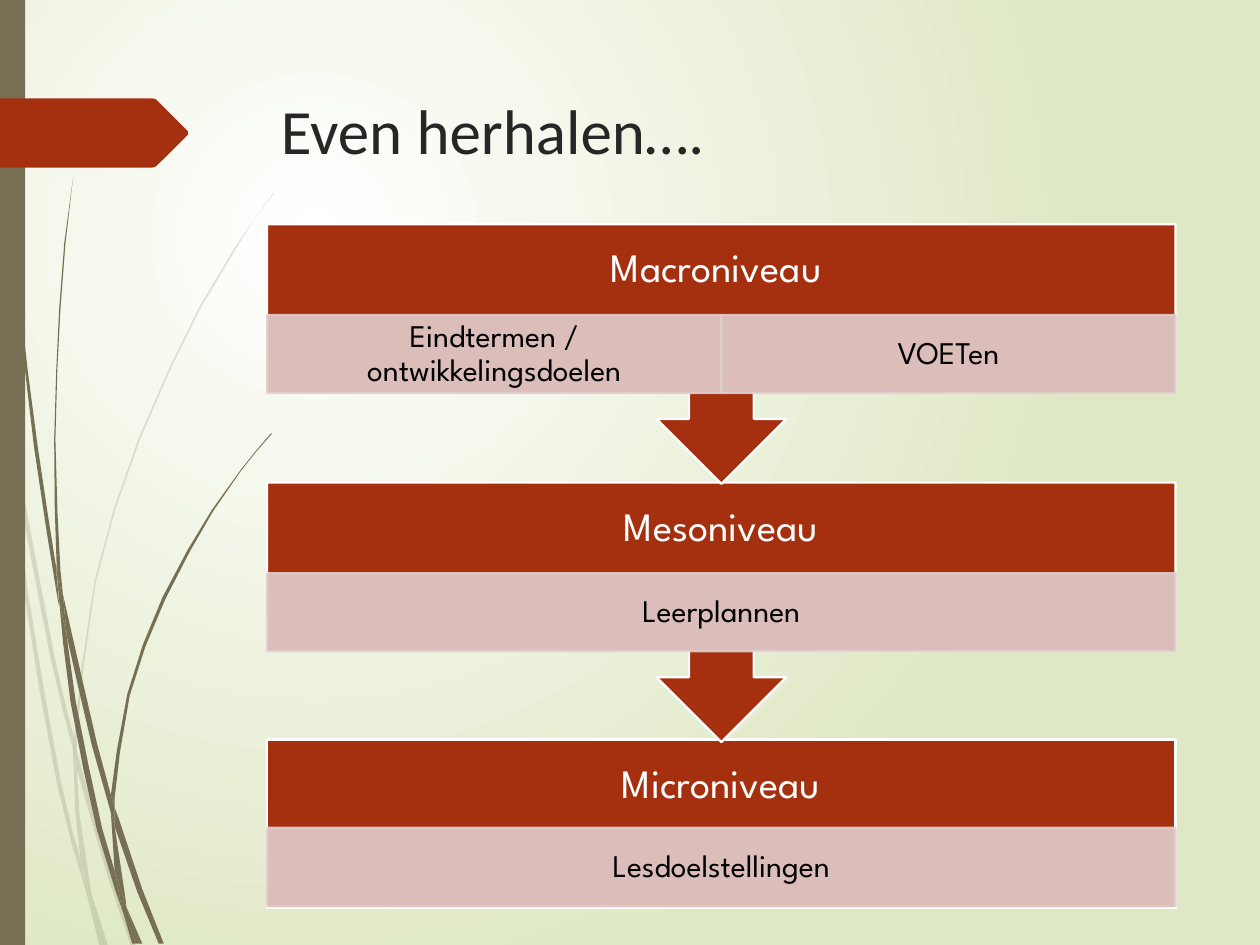
from dataclasses import dataclass
from pptx import Presentation
from pptx import util as u
from pptx.dml.color import RGBColor
from pptx.enum import shapes, text
from pptx.oxml import parse_xml
from pptx.oxml.ns import nsdecls, qn

PX = 9144  # one px is a hundredth of an inch


@dataclass(frozen=True)
class Theme:
    red: str = "A53010"
    pink: str = "E1CDCC"
    olive: str = "766F54"
    white: str = "FFFFFF"
    lime: str = "DFE8C4"
    ink: str = "262626"
    black: str = "000000"
    title: int = 36
    head: int = 23
    item: int = 18
    line: float = 1.25
    main: str = "Calibri"
    body: str = "League Spartan"


T = Theme()

TITLE = "Even herhalen…."
# top, name, items
LEVELS = [
    (178, "Macroniveau ", ["Eindtermen / ontwikkelingsdoelen", "VOETen"]),
    (383, "Mesoniveau", ["Leerplannen"]),
    (587, "Microniveau", ["Lesdoelstellingen"]),
]
LEFT, WIDE = 212, 721
CALL, BASE, HEAD, ITEM = 206, 134, 72, 62

# Each blade of grass is a pair of edges: one way out, one way back.
PALE = [
    ([(8, 350), (6, 322), (0, 282)], [(0, 299), (7, 344)]),
    ([(12, 376), (40, 522), (59, 599)], [(59, 586), (43, 520), (10, 345)]),
    ([(61, 610), (85, 694), (104, 751)], [(108, 751), (88, 692), (64, 607), (61, 596)]),
    ([(73, 711), (83, 751)], [(86, 751)]),
    ([(8, 350), (19, 470), (45, 621), (64, 693), (70, 714)],
     [(69, 707), (64, 683), (48, 619), (22, 469), (12, 376)]),
    ([(58, 599), (60, 646), (64, 683), (67, 692), (73, 711)],
     [(72, 706), (63, 646), (61, 610)]),
    ([(61, 596), (61, 584), (76, 462), (111, 349), (159, 245), (187, 198), (201, 175), (217, 154)],
     [(217, 153), (201, 175), (186, 197), (158, 244), (110, 348), (75, 461), (59, 584), (59, 586)]),
    ([(70, 714), (79, 751)], [(82, 751)]),
    ([(58, 599), (61, 608), (61, 610)], [(61, 596), (59, 586)]),
    ([(65, 683), (69, 707), (70, 714), (82, 751)], [(83, 751), (73, 711), (67, 692)]),
]
DARK = [
    ([(2, 0), (3, 48), (5, 110), (14, 233), (27, 355), (46, 477), (47, 481)],
     [(45, 457), (45, 453), (30, 355), (15, 232), (6, 109), (4, 48), (3, 0)]),
    ([(53, 505), (73, 592), (88, 645)], [(88, 633), (88, 631), (77, 590), (50, 472)]),
    ([(91, 656), (109, 708), (126, 749)], [(130, 749), (113, 706), (94, 649), (91, 641)]),
    ([(47, 477), (56, 557), (77, 659), (92, 708), (97, 722)],
     [(96, 717), (91, 691), (81, 657), (60, 556), (53, 505)]),
    ([(50, 472), (48, 453), (44, 349), (48, 245), (52, 193), (58, 141)],
     [(58, 141), (51, 193), (47, 245), (43, 349), (45, 449), (49, 472)]),
    ([(100, 719), (110, 749)], [(113, 749)]),
    ([(45, 453), (47, 477), (53, 505)], [(50, 472), (49, 472), (45, 449)]),
    ([(91, 641), (91, 633), (103, 552), (131, 476), (169, 406), (191, 374), (203, 359), (216, 344)],
     [(215, 344), (203, 358), (191, 373), (168, 405), (129, 474), (101, 551), (88, 631)]),
    ([(97, 722), (105, 749)], [(108, 749)]),
    ([(88, 645), (91, 691), (96, 706), (100, 719)], [(100, 716), (91, 656), (90, 651)]),
    ([(88, 645), (90, 651), (91, 656)], [(91, 641), (88, 631), (88, 633)]),
    ([(91, 691), (96, 717), (97, 722), (108, 749)], [(110, 749), (100, 719), (96, 706)]),
]
TAG = [(0, 78), (121, 78), (124, 79), (149, 104), (149, 107),
       (124, 132), (121, 133), (0, 133)]
LONG = 60  # a shorter stretch of an edge stays straight


def rgb(code):
    return RGBColor.from_string(code)


def fade(fill, share):
    """Set the opacity, in percent, of a solid fill."""
    tone = fill._xPr.find(qn("a:solidFill"))[0]
    tone.append(parse_xml(f'<a:alpha {nsdecls("a")} val="{share * 1000}"/>'))


def paint(shape, tone, edge=None, share=100):
    shape.shadow.inherit = False
    shape.fill.solid()
    shape.fill.fore_color.rgb = rgb(tone)
    if edge:
        shape.line.color.rgb = rgb(edge)
        shape.line.width = u.Pt(T.line)
    else:
        shape.line.fill.background()
    if share < 100:
        fade(shape.fill, share)
        if edge:
            fade(shape.line.fill, share)


def write(shape, words, size, tone, font, pad, mid=True):
    frame = shape.text_frame
    frame.word_wrap = True
    frame.margin_left = frame.margin_right = pad[0] * PX
    frame.margin_top = frame.margin_bottom = pad[1] * PX
    frame.vertical_anchor = text.MSO_ANCHOR.MIDDLE if mid else text.MSO_ANCHOR.TOP
    para = frame.paragraphs[0]
    para.text = words
    para.alignment = text.PP_ALIGN.CENTER if mid else text.PP_ALIGN.LEFT
    if mid:
        para.line_spacing = 0.9
    para.font.size = u.Pt(size)
    para.font.name = font
    para.font.color.rgb = rgb(tone)


def smooth(edge):
    """Add a Catmull-Rom midpoint to each long stretch of the edge."""
    ends = [edge[0], *edge, edge[-1]]
    out = [edge[0]]
    for a, b, c, d in zip(ends, ends[1:], ends[2:], ends[3:]):
        if abs(c[1] - b[1]) > LONG:
            out.append(tuple((9 * (q + r) - p - s) / 16
                             for p, q, r, s in zip(a, b, c, d)))
        out.append(c)
    return out


def outline(tree, points, tone, share=100):
    spots = [(round(x * PX), round(y * PX)) for x, y in points]
    pen = tree.build_freeform(*spots[0], scale=1.0)
    pen.add_line_segments(spots[1:], close=True)
    paint(pen.convert_to_shape(), tone, share=share)


def box(tree, kind, *area):
    return tree.add_shape(kind, *(round(n * PX) for n in area))


def label(tree, *area):
    return tree.add_textbox(*(n * PX for n in area))


def glow(slide):
    """Radial background, white near the upper left."""
    fill = slide.background.fill
    fill.gradient()
    for stop, tone, spot in zip(fill.gradient_stops, (T.white, T.lime), (0, 1)):
        stop.color.rgb = rgb(tone)
        stop.position = spot
    grad = slide._element.find(".//" + qn("a:gradFill"))
    ray = parse_xml(f'<a:path {nsdecls("a")} path="circle"><a:fillToRect '
                    'l="50000" t="50000" r="100000" b="100000"/></a:path>')
    grad.replace(grad.find(qn("a:lin")), ray)


def level(tree, top, name, items, last):
    kind = shapes.MSO_SHAPE.RECTANGLE if last else shapes.MSO_SHAPE.UP_ARROW_CALLOUT
    block = box(tree, kind, LEFT, top, WIDE, BASE if last else CALL)
    block.rotation = 0 if last else 180
    paint(block, T.red, T.white)
    write(label(tree, LEFT, top, WIDE, HEAD), name, T.head, T.white, T.body, (18, 18))
    each = WIDE / len(items)
    drop = HEAD - 2 if last else HEAD
    for col, item in enumerate(items):
        cell = box(tree, shapes.MSO_SHAPE.RECTANGLE,
                   LEFT + col * each, top + drop, each, ITEM)
        paint(cell, T.pink, T.pink, 90)
        write(cell, item, T.item, T.black, T.body, (14, 3))


def main():
    deck = Presentation()
    deck.slide_width, deck.slide_height = 1000 * PX, 750 * PX
    slide = deck.slides.add_slide(deck.slide_layouts[6])
    tree = slide.shapes
    glow(slide)
    for blades, share in ((PALE, 20), (DARK, 100)):
        for out, back in blades:
            outline(tree, smooth(out) + smooth(back), T.olive, share)
    paint(box(tree, shapes.MSO_SHAPE.RECTANGLE, 0, 0, 20, 750), T.olive)
    outline(tree, TAG, T.red)
    write(label(tree, 213, 68, 721, 140), TITLE, T.title, T.ink, T.main, (10, 5), mid=False)
    for row in reversed(LEVELS):
        level(tree, *row, last=row is LEVELS[-1])
    deck.save("out.pptx")


if __name__ == "__main__":
    main()
